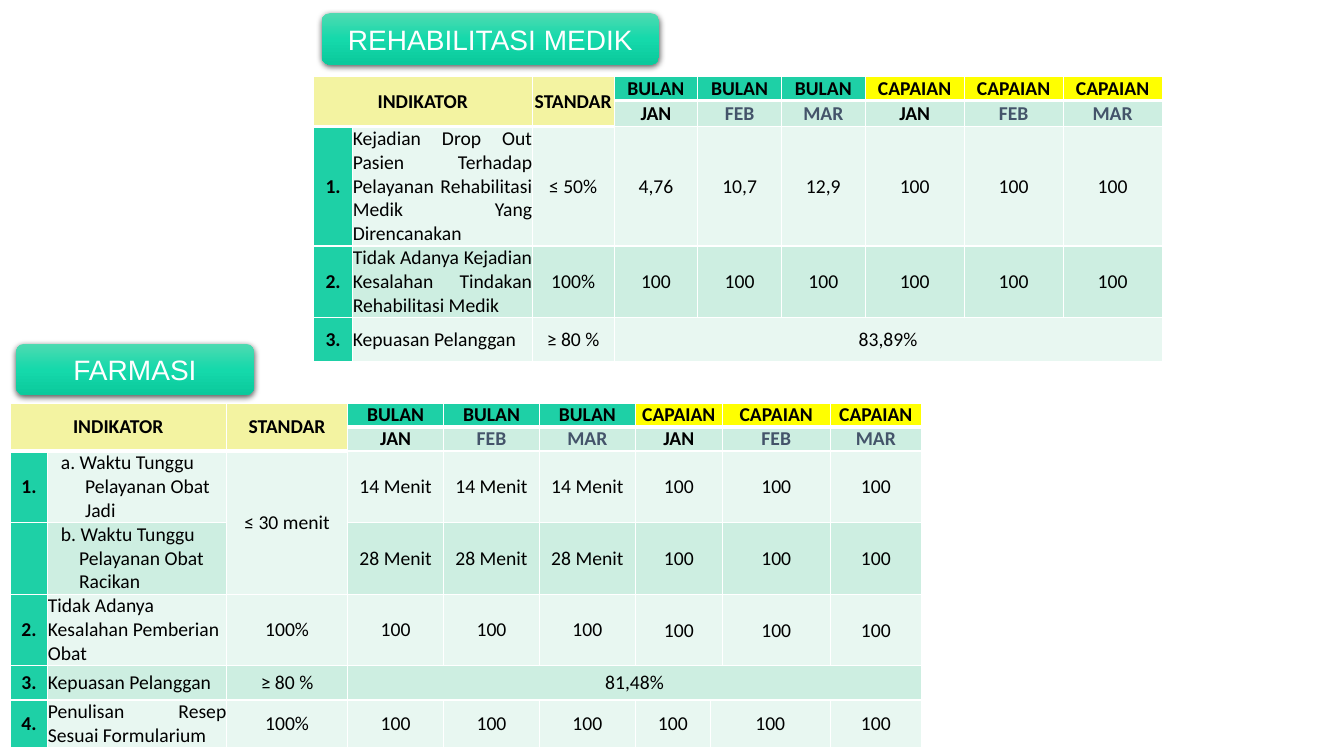
from dataclasses import dataclass

from lxml import etree
from pptx import Presentation
from pptx.dml.color import RGBColor
from pptx.enum.shapes import MSO_SHAPE as Shape
from pptx.enum.text import MSO_ANCHOR as Anchor, PP_ALIGN as Align
from pptx.oxml import parse_xml
from pptx.oxml.ns import nsdecls, qn
from pptx.util import Pt


@dataclass(frozen=True)
class Theme:
    title_font: str = "Arial"
    table_font: str = "Calibri"
    title_size: int = 20
    table_size: int = 14
    white: str = "FFFFFF"
    black: str = "000000"
    slate: str = "44546A"
    cream: str = "F3F3A1"
    yellow: str = "FFFF00"
    mint: str = "1ED0A6"
    band_dark: str = "CDEEE1"
    band_light: str = "E8F7F1"
    gradient: tuple = ((0, "4EDAB1"), (50, "15D9AB"), (100, "0BC99C"))


HEADER_ROWS = 2
FIRST_MONTH_COLUMN = 3
FIRST_RESULT_COLUMN = 6
BULAN = ["BULAN"] * 3
MONTHS = ["JAN", "FEB", "MAR"]
JUSTIFIED = (Align.JUSTIFY, 0, 0)
LEFT = (Align.LEFT, 0, 0)


class SlideBuilder:
    def __init__(self, slide, theme):
        self.slide = slide
        self.theme = theme

    def format_text(self, paragraph, font_name, size, color, bold=False):
        for run in paragraph.runs:
            run.font.name = font_name
            run.font.size = Pt(size)
            run.font.bold = bold
            run.font.color.rgb = RGBColor.from_string(color)

    def title(self, text, left, top, width, height):
        shape = self.slide.shapes.add_shape(
            Shape.ROUNDED_RECTANGLE, Pt(left), Pt(top), Pt(width), Pt(height))
        stops = "".join(
            f'<a:gs pos="{position * 1000}"><a:srgbClr val="{color}"/></a:gs>'
            for position, color in self.theme.gradient)
        properties = shape._element.spPr
        properties.append(parse_xml(
            f'<a:gradFill {nsdecls("a")} rotWithShape="1"><a:gsLst>{stops}</a:gsLst>'
            '<a:lin ang="5400000" scaled="0"/></a:gradFill>'))
        shape.line.fill.background()
        properties.append(parse_xml(
            f'<a:effectLst {nsdecls("a")}><a:outerShdw blurRad="{Pt(4.5)}" '
            f'dist="{Pt(1.5)}" dir="5400000" algn="ctr" rotWithShape="0">'
            f'<a:srgbClr val="{self.theme.black}"><a:alpha val="63000"/></a:srgbClr>'
            '</a:outerShdw></a:effectLst>'))
        frame = shape.text_frame
        frame.margin_left = frame.margin_right = Pt(7.2)
        frame.margin_top = frame.margin_bottom = Pt(7.2)
        frame.vertical_anchor = Anchor.MIDDLE
        frame.text = text
        paragraph = frame.paragraphs[0]
        paragraph.alignment = Align.CENTER
        self.format_text(paragraph, self.theme.title_font, self.theme.title_size,
                         self.theme.white)

    def cell_fill(self, row, column, text):
        if row < HEADER_ROWS and column < FIRST_MONTH_COLUMN:
            return self.theme.cream
        if row == 0:
            return self.theme.mint if text == "BULAN" else self.theme.yellow
        if row >= HEADER_ROWS and column == 0:
            return self.theme.mint
        return self.theme.band_dark if row % 2 else self.theme.band_light

    def cell_borders(self, cell, row, column):
        """White rules, with a heavy one below the headings."""
        heavy = row == 0 or (row == 1 and column < FIRST_MONTH_COLUMN)
        widths = {"lnL": 1, "lnR": 1, "lnB": 3 if heavy else 1}
        if row == 0:
            widths = {"lnL": 1, "lnR": 1, "lnT": 1, "lnB": 3}
        properties = cell._tc.get_or_add_tcPr()
        for name, width in widths.items():
            line = etree.SubElement(properties, qn(f"a:{name}"), w=str(Pt(width)))
            fill = etree.SubElement(line, qn("a:solidFill"))
            etree.SubElement(fill, qn("a:srgbClr"), val=self.theme.white)

    def cell_text(self, cell, row, column, text, indicator_style):
        cell.text = text
        paragraph = cell.text_frame.paragraphs[0]
        paragraph.alignment = Align.CENTER
        if row >= HEADER_ROWS and column == 1:
            paragraph.alignment, margin, indent = indicator_style
            properties = paragraph._p.get_or_add_pPr()
            properties.set("marL", str(Pt(margin)))
            properties.set("indent", str(Pt(indent)))
        color = self.theme.slate if text in ("FEB", "MAR") else self.theme.black
        self.format_text(paragraph, self.theme.table_font, self.theme.table_size,
                         color, row < HEADER_ROWS or column == 0)

    def table(self, left, top, widths, heights, rows, indicator_styles, merges):
        """Draw the grid; each merge is (top row, left column, bottom row, right column)."""
        table = self.slide.shapes.add_table(
            len(rows), len(widths), Pt(left), Pt(top),
            Pt(sum(widths)), Pt(sum(heights))).table
        for table_column, width in zip(table.columns, widths):
            table_column.width = Pt(width)
        for table_row, height in zip(table.rows, heights):
            table_row.height = Pt(height)
        styles = [LEFT] * HEADER_ROWS + indicator_styles
        for row, texts in enumerate(rows):
            for column, text in enumerate(texts):
                cell = table.cell(row, column)
                is_result = (HEADER_ROWS <= row < len(rows) - 1
                             and column >= FIRST_RESULT_COLUMN)
                inset = Pt(0.7 if is_result else 0)
                cell.margin_left = cell.margin_right = cell.margin_top = inset
                cell.margin_bottom = 0
                cell.vertical_anchor = Anchor.MIDDLE
                self.cell_borders(cell, row, column)
                cell.fill.solid()
                cell.fill.fore_color.rgb = RGBColor.from_string(
                    self.cell_fill(row, column, text))
                if text:
                    self.cell_text(cell, row, column, text, styles[row])
        for first_row, first_column, last_row, last_column in merges:
            table.cell(first_row, first_column).merge(table.cell(last_row, last_column))


def add_rehabilitation(builder):
    builder.title("REHABILITASI MEDIK", 229.7, 9.4, 241.2, 36.7)
    builder.table(
        223.9, 54.7,
        [28.1, 128.2, 58.5] + [59.8] * 3 + [70.7] * 3,
        [13.7, 18.7, 55.4, 49, 31.7],
        [
            ["INDIKATOR", "", "STANDAR"] + BULAN + ["CAPAIAN"] * 3,
            [""] * 3 + MONTHS * 2,
            ["1.", "Kejadian Drop Out Pasien Terhadap Pelayanan Rehabilitasi Medik "
             "Yang Direncanakan", "≤ 50%", "4,76", "10,7", "12,9"] + ["100"] * 3,
            ["2.", "Tidak Adanya Kejadian Kesalahan Tindakan Rehabilitasi Medik",
             "100%"] + ["100"] * 6,
            ["3.", "Kepuasan Pelanggan", "≥ 80 %", "83,89%"] + [""] * 5,
        ],
        [JUSTIFIED] * 3,
        [(0, 0, 1, 1), (0, 2, 1, 2), (4, 3, 4, 8)])


def add_pharmacy(builder):
    results = ["100", "", "100", "100"]
    builder.title("FARMASI", 11.5, 245.5, 169.9, 36.7)
    builder.table(
        7.2, 288,
        [27, 127.6, 86.6] + [68.5] * 3 + [53.6, 8.6, 77, 65.3],
        [15.1, 15.1, 49, 36.7, 36.7, 24.5, 24.5],
        [
            ["INDIKATOR", "", "STANDAR"] + BULAN + ["CAPAIAN", "", "CAPAIAN", "CAPAIAN"],
            [""] * 3 + MONTHS + ["JAN", "", "FEB", "MAR"],
            ["1.", "a. Waktu Tunggu Pelayanan Obat Jadi", "≤ 30 menit"]
            + ["14 Menit"] * 3 + results,
            ["", "b. Waktu Tunggu Pelayanan Obat Racikan", ""]
            + ["28 Menit"] * 3 + results,
            ["2.", "Tidak Adanya Kesalahan Pemberian Obat", "100%"]
            + ["100"] * 3 + results,
            ["3.", "Kepuasan Pelanggan", "≥ 80 %", "81,48%"] + [""] * 6,
            ["4.", "Penulisan Resep Sesuai Formularium", "100%"]
            + ["100"] * 5 + ["", "100"],
        ],
        [(Align.LEFT, 26.6, -17.3), (Align.LEFT, 22.3, -13), LEFT, LEFT, JUSTIFIED],
        [(0, 0, 1, 1), (0, 2, 1, 2), (2, 2, 3, 2), (5, 3, 5, 9), (6, 7, 6, 8)]
        + [(row, 6, row, 7) for row in range(5)])


def main():
    presentation = Presentation()
    presentation.slide_width = Pt(960)
    presentation.slide_height = Pt(540)
    slide = presentation.slides.add_slide(presentation.slide_layouts[6])
    builder = SlideBuilder(slide, Theme())
    add_rehabilitation(builder)
    add_pharmacy(builder)
    presentation.save("out.pptx")


if __name__ == "__main__":
    main()
